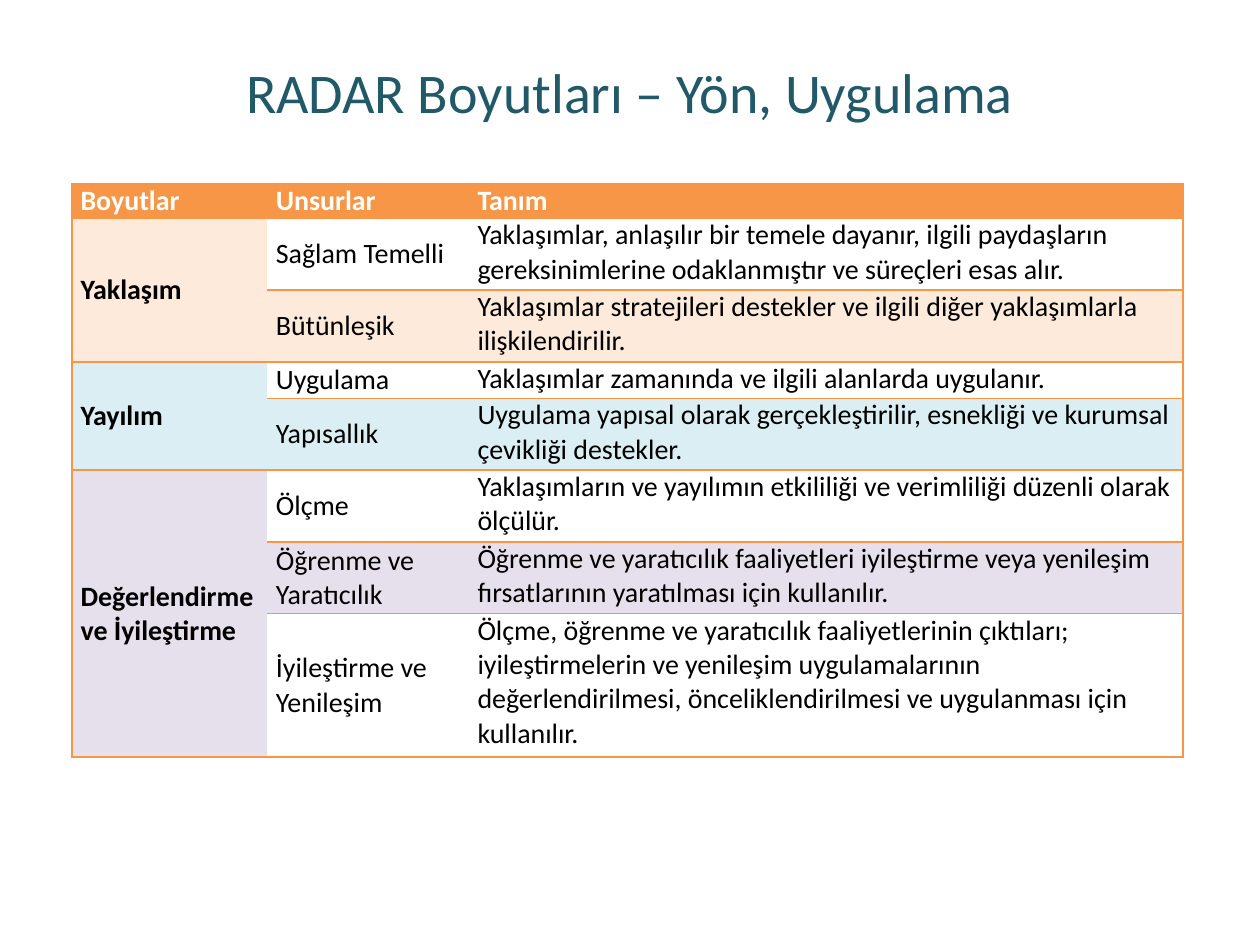
from dataclasses import dataclass

from pptx import Presentation
from pptx.dml.color import RGBColor as Rgb
from pptx.enum.text import MSO_ANCHOR as Anchor, PP_ALIGN as Align
from pptx.oxml import parse_xml
from pptx.oxml.ns import nsdecls
from pptx.util import Inches, Pt


@dataclass(frozen=True)
class Theme:
    """Colours and type sizes of the deck."""
    font: str = "Calibri"
    title: str = "215968"
    accent: str = "F79646"
    header_text: str = "FFFFFF"
    body_text: str = "000000"
    title_size: int = 32
    table_size: int = 16


HEADERS = ["Boyutlar", "Unsurlar", "Tanım"]
COLUMN_WIDTHS = [1.55, 1.6, 5.67]
ROW_HEIGHTS = [0.23, 0.57, 0.57, 0.29, 0.57, 0.57, 0.57, 1.14]
DIMENSIONS = [
    ("Yaklaşım", "FDEADA", [
        ("Sağlam Temelli", "Yaklaşımlar, anlaşılır bir temele dayanır, ilgili paydaşların "
         "gereksinimlerine odaklanmıştır ve süreçleri esas alır."),
        ("Bütünleşik", "Yaklaşımlar stratejileri destekler ve ilgili diğer yaklaşımlarla "
         "ilişkilendirilir."),
    ]),
    ("Yayılım", "DBEEF4", [
        ("Uygulama", "Yaklaşımlar zamanında ve ilgili alanlarda uygulanır."),
        ("Yapısallık", "Uygulama yapısal olarak gerçekleştirilir, esnekliği ve kurumsal "
         "çevikliği destekler."),
    ]),
    ("Değerlendirme ve İyileştirme", "E6E0EC", [
        ("Ölçme", "Yaklaşımların ve yayılımın etkililiği ve verimliliği düzenli olarak "
         "ölçülür."),
        ("Öğrenme ve Yaratıcılık", "Öğrenme ve yaratıcılık faaliyetleri iyileştirme veya "
         "yenileşim fırsatlarının yaratılması için kullanılır."),
        ("İyileştirme ve Yenileşim", "Ölçme, öğrenme ve yaratıcılık faaliyetlerinin çıktıları; "
         "iyileştirmelerin ve yenileşim uygulamalarının değerlendirilmesi, önceliklendirilmesi "
         "ve uygulanması için kullanılır."),
    ]),
]


class SlideBuilder:
    """Draws styled elements on the current slide."""

    def __init__(self, slide, theme):
        self.slide = slide
        self.theme = theme

    def set_text(self, para, text, size, color, bold=False):
        para.text = text
        font = para.font
        font.name, font.size, font.bold = self.theme.font, Pt(size), bold
        font.color.rgb = Rgb.from_string(color)

    def title(self, text, left, top, width, height):
        box = self.slide.shapes.add_textbox(
            Inches(left), Inches(top), Inches(width), Inches(height))
        frame = box.text_frame
        frame.word_wrap = True
        frame.vertical_anchor = Anchor.MIDDLE
        para = frame.paragraphs[0]
        para.alignment = Align.CENTER
        self.set_text(para, text, self.theme.title_size, self.theme.title)

    def borders(self, cell, sides):
        properties = cell._tc.get_or_add_tcPr()
        for index, side in enumerate("LRTB"):
            paint = (f'<a:solidFill><a:srgbClr val="{self.theme.accent}"/></a:solidFill>'
                     if side in sides else "<a:noFill/>")
            properties.insert(index, parse_xml(
                f'<a:ln{side} {nsdecls("a")} w="12700">{paint}</a:ln{side}>'))

    def cell(self, cell, text, fill=None, header=False, bold=False, spaced=False):
        cell.margin_left = cell.margin_right = Inches(0.07)
        cell.margin_top = cell.margin_bottom = 0
        cell.vertical_anchor = Anchor.TOP if spaced else Anchor.MIDDLE
        if fill:
            cell.fill.solid()
            cell.fill.fore_color.rgb = Rgb.from_string(fill)
        else:
            cell.fill.background()
        para = cell.text_frame.paragraphs[0]
        para.alignment = Align.JUSTIFY if header else Align.LEFT
        if spaced:
            para.space_before = para.space_after = Pt(1)
        color = self.theme.header_text if header else self.theme.body_text
        self.set_text(para, text, self.theme.table_size, color, bold)

    def table(self, left, top):
        frame = self.slide.shapes.add_table(
            len(ROW_HEIGHTS), len(COLUMN_WIDTHS), Inches(left), Inches(top),
            Inches(sum(COLUMN_WIDTHS)), Inches(sum(ROW_HEIGHTS)))
        table = frame.table
        table.first_row = table.horz_banding = False
        for column, width in zip(table.columns, COLUMN_WIDTHS):
            column.width = Inches(width)
        for row, height in zip(table.rows, ROW_HEIGHTS):
            row.height = Inches(height)

        for column, (text, edge) in enumerate(zip(HEADERS, ["L", "", "R"])):
            cell = table.cell(0, column)
            self.cell(cell, text, self.theme.accent, header=True, bold=True, spaced=True)
            self.borders(cell, edge + "TB")

        first = 1
        for name, tint, elements in DIMENSIONS:
            last = first + len(elements) - 1
            table.cell(first, 0).merge(table.cell(last, 0))
            self.cell(table.cell(first, 0), name, tint, bold=True)
            for row, (element, definition) in enumerate(elements, first):
                fill = tint if (row - first) % 2 else None
                self.cell(table.cell(row, 1), element, fill)
                self.cell(table.cell(row, 2), definition, fill, spaced=True)
                edge = "LTB" if row == first else "LB" if row == last else "L"
                for column, sides in enumerate([edge, "TB", "RTB"]):
                    self.borders(table.cell(row, column), sides)
            first = last + 1


def main():
    deck = Presentation()
    deck.slide_width, deck.slide_height = Inches(10), Inches(7.5)
    page = SlideBuilder(deck.slides.add_slide(deck.slide_layouts[6]), Theme())
    page.table(0.57, 1.46)
    page.title("RADAR Boyutları – Yön, Uygulama", 0.5, 0.3, 9, 0.85)
    deck.save("out.pptx")


if __name__ == "__main__":
    main()
